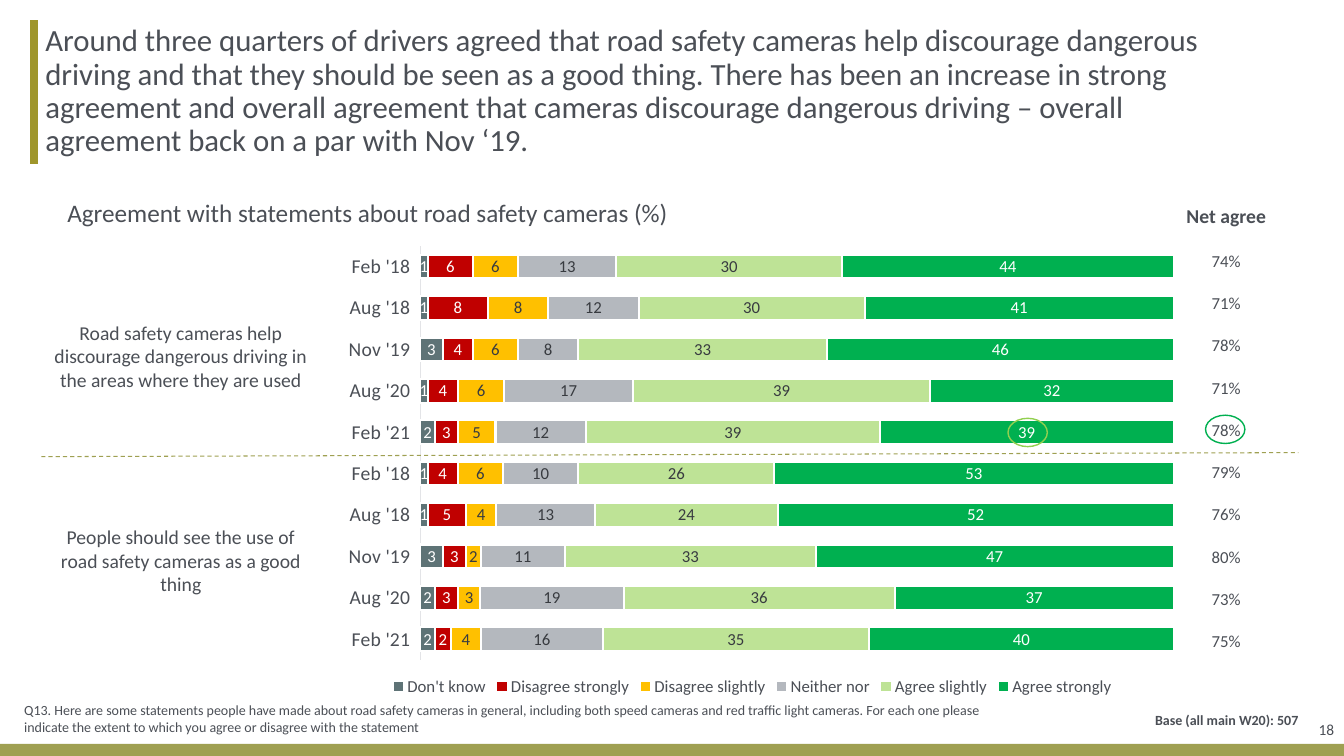
from lxml import etree
from pptx import Presentation
from pptx.chart.data import CategoryChartData
from pptx.dml.color import RGBColor
from pptx.enum.chart import XL_CHART_TYPE as ChartType
from pptx.enum.chart import XL_LABEL_POSITION as LabelPosition
from pptx.enum.chart import XL_LEGEND_POSITION as LegendPosition
from pptx.enum.chart import XL_TICK_LABEL_POSITION as TickLabelPosition
from pptx.enum.chart import XL_TICK_MARK as TickMark
from pptx.enum.dml import MSO_LINE as LineDash
from pptx.enum.shapes import MSO_CONNECTOR as Connector
from pptx.enum.shapes import MSO_SHAPE as Shape
from pptx.enum.text import MSO_ANCHOR as Anchor
from pptx.enum.text import PP_ALIGN as Align
from pptx.oxml import parse_xml
from pptx.oxml.ns import nsdecls, qn
from pptx.util import Pt

FONT = "Calibri"
TEXT = RGBColor(0x4B, 0x4F, 0x56)
DARK = RGBColor(0x38, 0x3B, 0x40)
WHITE = RGBColor(0xFF, 0xFF, 0xFF)
OLIVE = RGBColor(0x9F, 0xA0, 0x52)
TITLE_BAR = RGBColor(0x9F, 0x96, 0x2B)
AXIS = RGBColor(0xE3, 0xE4, 0xE7)
SLATE = RGBColor(0x5E, 0x73, 0x76)
RED = RGBColor(0xC0, 0x00, 0x00)
AMBER = RGBColor(0xFF, 0xC0, 0x00)
GREY = RGBColor(0xB4, 0xB8, 0xBE)
PALE_GREEN = RGBColor(0xBE, 0xE3, 0x96)
GREEN = RGBColor(0x00, 0xB0, 0x50)
LIME = RGBColor(0x92, 0xD0, 0x50)

WAVES = ["Feb '18", "Aug '18", "Nov '19", "Aug '20", "Feb '21"]
ANSWERS = [
    ("Don't know", SLATE, WHITE, (1, 1, 3, 1, 2, 1, 1, 3, 2, 2)),
    ("Disagree strongly", RED, WHITE, (6, 8, 4, 4, 3, 4, 5, 3, 3, 2)),
    ("Disagree slightly", AMBER, DARK, (6, 8, 6, 6, 5, 6, 4, 2, 3, 4)),
    ("Neither nor", GREY, DARK, (13, 12, 8, 17, 12, 10, 13, 11, 19, 16)),
    ("Agree slightly", PALE_GREEN, DARK, (30, 30, 33, 39, 39, 26, 24, 33, 36, 35)),
    ("Agree strongly", GREEN, WHITE, (44, 41, 46, 32, 39, 53, 52, 47, 37, 40)),
]
NET_AGREE = [74, 71, 78, 71, 78, 79, 76, 80, 73, 75]
PLOT_AREA = {"x": 0.149, "y": 0.126, "w": 0.796, "h": 0.796}

TITLE = (
    "Around three quarters of drivers agreed that road safety cameras help "
    "discourage dangerous driving and that they should be seen as a good thing. "
    "There has been an increase in strong agreement and overall agreement that "
    "cameras discourage dangerous driving – overall agreement back on a par with "
    "Nov ‘19."
)
QUESTION = (
    "Q13. Here are some statements people have made about road safety cameras in "
    "general, including both speed cameras and red traffic light cameras. For each "
    "one please indicate the extent to which you agree or disagree with the statement"
)
STATEMENTS = [
    (225.4, "Road safety cameras help discourage dangerous driving in the areas "
            "where they are used"),
    (371.5, "People should see the use of road safety cameras as a good thing"),
]
PANEL = {"margin_left": Pt(5.8), "margin_top": 0, "margin_right": 0,
         "margin_bottom": 0, "vertical_anchor": Anchor.MIDDLE}


def apply_format(target, values):
    for name, value in values.items():
        setattr(target, name, value)


def style_font(font, size, color=TEXT, bold=False):
    apply_format(font, {"name": FONT, "size": Pt(size), "bold": bold})
    font.color.rgb = color


def add_text(slide, box, text, size, paragraph_format=None, frame_format=None, bold=False):
    frame = slide.shapes.add_textbox(*map(Pt, box)).text_frame
    apply_format(frame, {"word_wrap": True, **(frame_format or {})})
    paragraph = frame.paragraphs[0]
    paragraph.text = text
    apply_format(paragraph, paragraph_format or {})
    style_font(paragraph.runs[0].font, size, bold=bold)


def add_line(slide, ends, color, width, dash=None):
    line = slide.shapes.add_connector(Connector.STRAIGHT, *map(Pt, ends))
    line.line.color.rgb = color
    apply_format(line.line, {"width": Pt(width), "dash_style": dash})
    etree.SubElement(line.element.spPr, qn("a:effectLst"))


def add_footer_band(slide):
    band = slide.shapes.add_shape(Shape.RECTANGLE, 0, Pt(531.4), Pt(960), Pt(8.6))
    band.shadow.inherit = False
    band.fill.solid()
    band.fill.fore_color.rgb = OLIVE
    band.line.fill.background()


def add_highlight(slide, left, top, color):
    ring = slide.shapes.add_shape(Shape.OVAL, Pt(left), Pt(top), Pt(28.1), Pt(20.2))
    ring.shadow.inherit = False
    ring.fill.background()
    ring.line.color.rgb = color
    ring.line.width = Pt(1)


def add_net_table(slide):
    rows = ["Net agree"] + [f"{value}%" for value in NET_AGREE]
    table = slide.shapes.add_table(
        len(rows), 1, Pt(838.8), Pt(137.5), Pt(74.2), Pt(336.2)).table
    apply_format(table, {"first_row": False, "horz_banding": False})
    for index, text in enumerate(rows):
        heading = index == 0
        table.rows[index].height = Pt(34.2 if heading else 30.2)
        cell = table.cell(index, 0)
        cell.text = text
        cell.fill.background()
        cell.vertical_anchor = Anchor.MIDDLE
        paragraph = cell.text_frame.paragraphs[0]
        paragraph.alignment = Align.CENTER
        style_font(paragraph.runs[0].font, 14 if heading else 12, bold=heading)


def place_plot_area(chart):
    """Fix the inner plot area and leave the chart background clear."""
    sizes = "".join(f'<c:{key} val="{value}"/>' for key, value in PLOT_AREA.items())
    layout = parse_xml(
        f'<c:layout {nsdecls("c")}><c:manualLayout><c:layoutTarget val="inner"/>'
        f'<c:xMode val="edge"/><c:yMode val="edge"/>{sizes}'
        "</c:manualLayout></c:layout>")
    space = chart.element
    plot_area = space.find(qn("c:chart")).find(qn("c:plotArea"))
    for previous in plot_area.findall(qn("c:layout")):
        plot_area.remove(previous)
    plot_area.insert(0, layout)
    space.find(qn("c:chart")).addnext(parse_xml(
        f'<c:spPr {nsdecls("c", "a")}><a:noFill/><a:ln><a:noFill/></a:ln></c:spPr>'))


def style_series(series, color, label_color):
    series.format.fill.solid()
    series.format.fill.fore_color.rgb = color
    series.format.line.color.rgb = WHITE
    series.format.line.width = Pt(1.5)
    labels = series.data_labels
    apply_format(labels, {"show_value": True, "position": LabelPosition.CENTER,
                          "number_format": "0", "number_format_is_linked": False})
    style_font(labels.font, 12, label_color)


def add_agreement_chart(slide):
    data = CategoryChartData()
    data.categories = WAVES * len(STATEMENTS)
    for name, _, _, values in ANSWERS:
        data.add_series(name, values)
    chart = slide.shapes.add_chart(
        ChartType.BAR_STACKED_100, Pt(199.4), Pt(128.9), Pt(676.1), Pt(371.5), data).chart
    apply_format(chart, {"has_title": False, "has_legend": True})
    style_font(chart.font, 10)
    apply_format(chart.legend, {"position": LegendPosition.BOTTOM,
                                "include_in_layout": False})
    style_font(chart.legend.font, 12)
    apply_format(chart.category_axis, {
        "reverse_order": True, "major_tick_mark": TickMark.NONE,
        "minor_tick_mark": TickMark.NONE, "has_major_gridlines": False,
        "tick_label_position": TickLabelPosition.LOW})
    style_font(chart.category_axis.tick_labels.font, 14)
    chart.category_axis.format.line.color.rgb = AXIS
    chart.category_axis.format.line.width = Pt(0.75)
    apply_format(chart.value_axis, {"visible": False, "has_major_gridlines": False,
                                    "minimum_scale": 0, "maximum_scale": 1})
    plot = chart.plots[0]
    apply_format(plot, {"gap_width": 75, "overlap": 100, "vary_by_categories": False})
    for series, (_, color, label_color, _) in zip(plot.series, ANSWERS):
        style_series(series, color, label_color)
    place_plot_area(chart)


def main():
    presentation = Presentation()
    apply_format(presentation, {"slide_width": Pt(960), "slide_height": Pt(540)})
    slide = presentation.slides.add_slide(presentation.slide_layouts[6])
    centred, right = {"alignment": Align.CENTER}, {"alignment": Align.RIGHT}

    add_footer_band(slide)
    add_line(slide, (24.5, 14.4, 24.5, 117.4), TITLE_BAR, 6)
    add_net_table(slide)
    add_text(slide, (894.2, 500.4, 66, 41.8), "18", 11, right,
             {"vertical_anchor": Anchor.MIDDLE})
    add_text(slide, (26.6, 14.4, 838.8, 102.2), TITLE, 22, {"line_spacing": 0.9}, PANEL)
    add_text(slide, (11.5, 501.8, 717.1, 22.3), QUESTION, 10, frame_format=PANEL)
    add_agreement_chart(slide)
    add_text(slide, (41, 137.5, 681.8, 28.8),
             "Agreement with statements about road safety cameras (%)", 18)
    add_text(slide, (643.7, 503, 283.7, 23), "Base (all main W20): 507", 10,
             right, PANEL, bold=True)
    add_line(slide, (29.5, 326.2, 927.4, 323.3), OLIVE, 0.75, LineDash.DASH)
    for top, statement in STATEMENTS:
        add_text(slide, (26.6, top, 205.2, 58.3), statement, 14, centred)
    add_highlight(slide, 720, 298.8, LIME)
    add_highlight(slide, 861.1, 296.6, GREEN)
    presentation.save("out.pptx")


if __name__ == "__main__":
    main()
